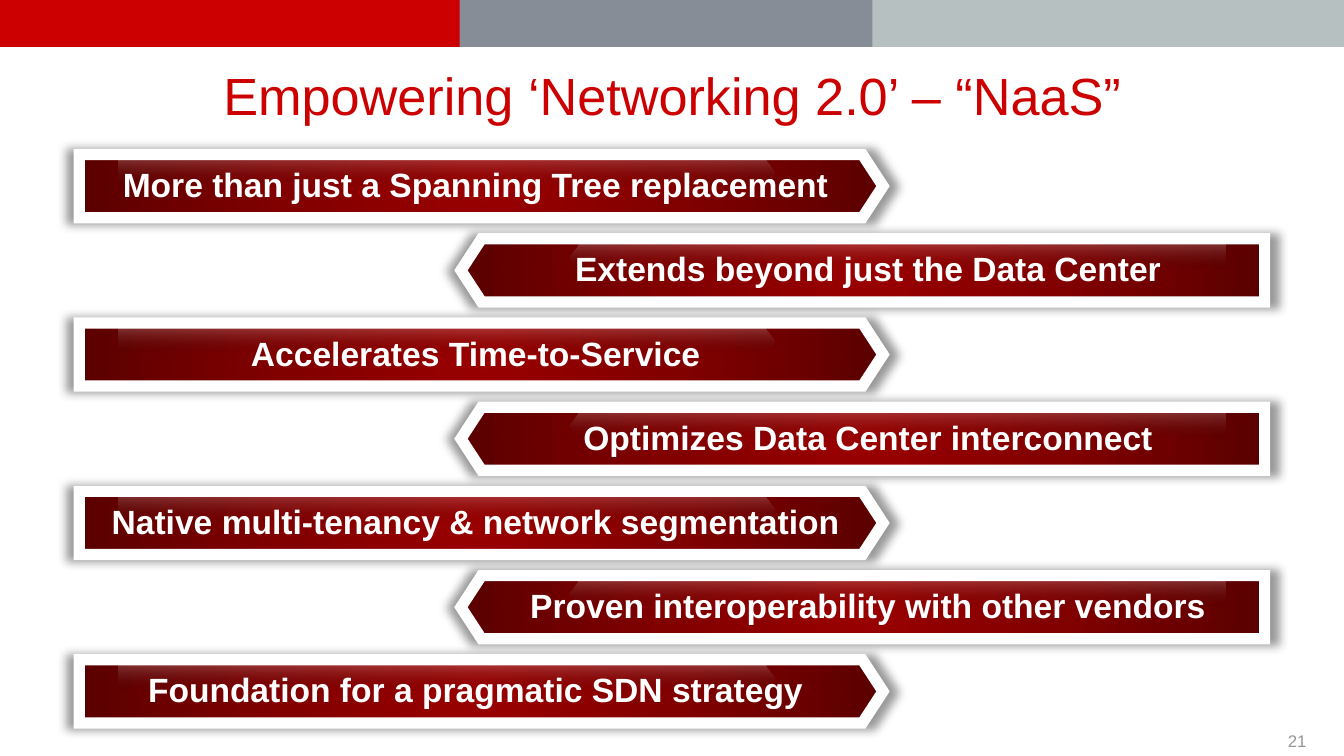
from lxml import etree
from pptx import Presentation
from pptx import util as u
from pptx.dml.color import RGBColor
from pptx.enum import shapes, text
from pptx.oxml import ns

BANNER = [(1.77, 4.75, "868D96"), (6.49, 3.52, "B7C0C0"), (0, 3.42, "CC0000")]
MESSAGES = [
    "More than just a Spanning Tree replacement",
    "Extends beyond just the Data Center",
    "Accelerates Time-to-Service",
    "Optimizes Data Center interconnect",
    "Native multi-tenancy & network segmentation",
    "Proven interoperability with other vendors",
    "Foundation for a pragmatic SDN strategy",
]
PLATE_W, PLATE_H = 5.98, 0.47
GLOSS_W, GLOSS_H, GLOSS_INSET = 4.88, 0.19, 0.29
LABEL_W, LABEL_H = 6.06, 0.35
RIGHT_POINTING_X, LEFT_POINTING_X = 0.59, 3.43
FIRST_Y, LAST_Y = 1.15, 4.91

PLATE_STOPS = [(0, "990000", 100), (50, "810000", 100), (100, "5B0000", 100)]
GLOSS_STOPS = [(0, "FFFFFF", 20), (100, "000000", 0)]
CENTRE_OUT = ('<a:path path="circle"><a:fillToRect l="50000" t="50000" '
              'r="50000" b="50000"/></a:path>')
DOWNWARD = '<a:lin ang="5400000" scaled="0"/>'


def colour(hex_string):
    return RGBColor.from_string(hex_string)


def box(left, top, width, height):
    return [u.Inches(v) for v in (left, top, width, height)]


def element(xml):
    tag, rest = xml.split(" ", 1)
    return etree.fromstring(f"{tag} {ns.nsdecls('a')} {rest}")


def write(shape, words, size, hex_string, align, bold=False, margins=(0.1, 0.05),
          line_spacing=1.0):
    frame = shape.text_frame
    side, edge = (u.Inches(m) for m in margins)
    frame_format = {
        "word_wrap": True, "vertical_anchor": text.MSO_ANCHOR.MIDDLE,
        "margin_left": side, "margin_right": side,
        "margin_top": edge, "margin_bottom": edge,
    }
    for name, value in frame_format.items():
        setattr(frame, name, value)
    frame.text = words
    paragraph = frame.paragraphs[0]
    paragraph.alignment = align
    paragraph.line_spacing = line_spacing
    font = paragraph.runs[0].font
    for name, value in {"name": "Arial", "size": u.Pt(size), "bold": bold}.items():
        setattr(font, name, value)
    font.color.rgb = colour(hex_string)


def add_banner(slide, top, height):
    for left, width, hex_string in BANNER:
        band = slide.shapes.add_shape(
            shapes.MSO_SHAPE.RECTANGLE, *box(left, top, width, height))
        band.shadow.inherit = False
        band.fill.solid()
        band.fill.fore_color.rgb = colour(hex_string)
        band.line.fill.background()


def add_title(slide, left, top, width, height):
    title = slide.shapes.title
    title.left, title.top, title.width, title.height = box(left, top, width, height)
    write(title, "Empowering ‘Networking 2.0’ – “NaaS”", 28, "CC0000",
          text.PP_ALIGN.CENTER)


def add_pentagon(group, bounds, point, stops, direction, flipped):
    pentagon = group.shapes.add_shape(shapes.MSO_SHAPE.PENTAGON, *box(*bounds))
    pentagon.adjustments[0] = point
    pentagon.shadow.inherit = False
    pentagon.line.fill.background()
    properties = pentagon._element.spPr
    if flipped:
        properties.find(ns.qn("a:xfrm")).set("flipH", "1")
    marks = "".join(
        f'<a:gs pos="{position * 1000}"><a:srgbClr val="{hex_string}">'
        f'<a:alpha val="{opacity * 1000}"/></a:srgbClr></a:gs>'
        for position, hex_string, opacity in stops)
    properties.find(ns.qn("a:prstGeom")).addnext(element(
        f'<a:gradFill rotWithShape="1"><a:gsLst>{marks}</a:gsLst>{direction}</a:gradFill>'))
    return pentagon


def add_message(slide, left, top, words, flipped):
    group = slide.shapes.add_group_shape()
    plate = add_pentagon(group, (left, top, PLATE_W, PLATE_H), 0.326,
                         PLATE_STOPS, CENTRE_OUT, flipped)
    plate.line.color.rgb = colour("FFFFFF")
    plate.line.width = u.Pt(6)
    properties = plate._element.spPr
    properties.find(ns.qn("a:ln")).append(element('<a:miter lim="800000"/>'))
    properties.find(ns.qn("a:effectLst")).append(element(
        f'<a:outerShdw blurRad="{u.Pt(5)}" dist="0" dir="0" sx="102000" sy="102000" '
        'algn="ctr" rotWithShape="0">'
        '<a:srgbClr val="000000"><a:alpha val="40000"/></a:srgbClr></a:outerShdw>'))

    gloss_offset = PLATE_W - GLOSS_INSET - GLOSS_W if flipped else GLOSS_INSET
    add_pentagon(group, (left + gloss_offset, top + 0.04, GLOSS_W, GLOSS_H), 0.385,
                 GLOSS_STOPS, DOWNWARD, flipped)

    label_left = left if flipped else left + PLATE_W - LABEL_W
    label = slide.shapes.add_textbox(*box(label_left, top + 0.06, LABEL_W, LABEL_H))
    write(label, words, 18, "FFFFFF", text.PP_ALIGN.CENTER, bold=True,
          margins=(0.11, 0.06), line_spacing=0.95)


def add_page_number(slide, left, top, width, height):
    number = slide.shapes.add_textbox(*box(left, top, width, height))
    write(number, "21", 9, "969696", text.PP_ALIGN.RIGHT)


def main():
    deck = Presentation()
    deck.slide_width = u.Inches(10)
    deck.slide_height = deck.slide_width * 9 // 16
    slide = deck.slides.add_slide(deck.slide_layouts[5])
    add_banner(slide, 0, 0.35)
    add_page_number(slide, 7.49, 5.39, 2.33, 0.25)
    add_title(slide, 0.5, 0.36, 9, 0.69)
    pitch = (LAST_Y - FIRST_Y) / (len(MESSAGES) - 1)
    for row, words in enumerate(MESSAGES):
        flipped = row % 2 == 1
        left = LEFT_POINTING_X if flipped else RIGHT_POINTING_X
        add_message(slide, left, FIRST_Y + row * pitch, words, flipped)
    deck.save("out.pptx")


if __name__ == "__main__":
    main()
